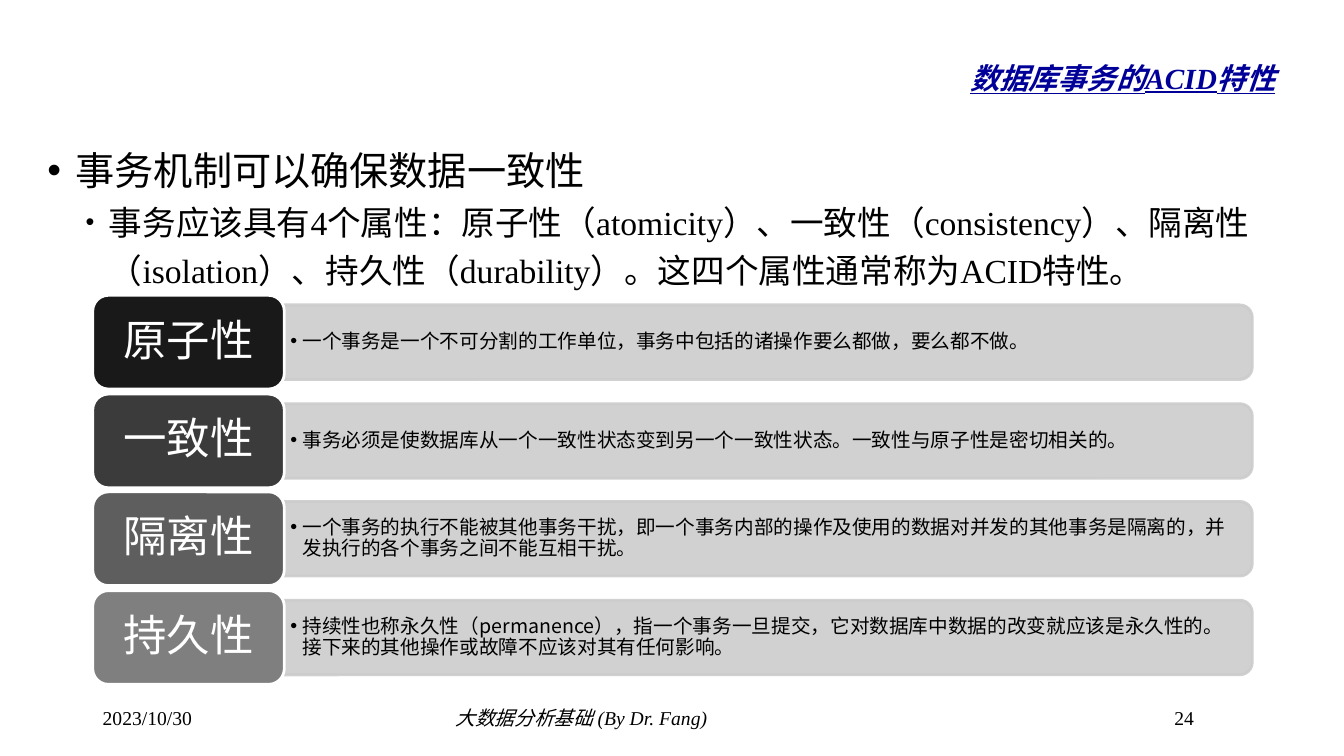
from lxml import etree
from pptx import Presentation
from pptx.dml.color import RGBColor as RGB
from pptx.enum.shapes import MSO_SHAPE as SHAPE
from pptx.enum.text import MSO_ANCHOR as ANCHOR, MSO_AUTO_SIZE as AUTO, PP_ALIGN as ALIGN
from pptx.oxml.ns import qn
from pptx.util import Pt

# Content
TITLE = "数据库事务的ACID特性"
POINTS = [  # text, size, left margin, hanging indent, bullet percent
    ("事务机制可以确保数据一致性", 28, 28, 28, 100),
    ("事务应该具有4个属性：原子性（atomicity）、一致性（consistency）、"
     "隔离性（isolation）、持久性（durability）。这四个属性通常称为ACID特性。", 24, 61, 23, 75),
]
CARDS = [  # label, opacity percent, description
    ("原子性", 90, "一个事务是一个不可分割的工作单位，事务中包括的诸操作要么都做，要么都不做。"),
    ("一致性", 77, "事务必须是使数据库从一个一致性状态变到另一个一致性状态。一致性与原子性是密切相关的。"),
    ("隔离性", 63, "一个事务的执行不能被其他事务干扰，即一个事务内部的操作及使用的数据对并发的"
     "其他事务是隔离的，并发执行的各个事务之间不能互相干扰。"),
    ("持久性", 50, "持续性也称永久性（permanence），指一个事务一旦提交，它对数据库中数据的改变"
     "就应该是永久性的。接下来的其他操作或故障不应该对其有任何影响。"),
]
FOOT = [  # text, left, width, italic
    ("2023/10/30", 92, 300, False),
    ("大数据分析基础 (By Dr. Fang)", 442, 642, True),
    ("24", 1155, 87, False),
]
COLORS = {"title": "000099", "text": "000000", "label": "FFFFFF", "card": "000000", "bar": "CCCCCC"}
SERIF, SANS = "Times New Roman", "Noto Sans CJK SC"

# Geometry, 100 px to the inch
PX = 9144
LEFT, TOP, PITCH = 92, 293, 97.6
CARD_W, CARD_H = 190, 93
BAR_W, BAR_H = 960, 74
TEXT_W, TEXT_H = 956, 67


def place(shape, x, y, w, h):
    shape.left, shape.top, shape.width, shape.height = [round(v * PX) for v in (x, y, w, h)]


def style(para, size, face, color):
    font = para.font
    font.size, font.name = Pt(size), face
    font.color.rgb = RGB.from_string(COLORS[color])
    return font


def bullet(para, margin, hang, percent=100):
    props = para._p.get_or_add_pPr()
    props.set("marL", str(margin * PX))
    props.set("indent", str(-hang * PX))
    for tag, key, val in (("a:buSzPct", "val", str(percent * 1000)),
                          ("a:buFont", "typeface", "Arial"), ("a:buChar", "char", "•")):
        etree.SubElement(props, qn(tag)).set(key, val)


def inset(frame, x, y):
    frame.margin_left = frame.margin_right = x * PX
    frame.margin_top = frame.margin_bottom = y * PX
    frame.vertical_anchor = ANCHOR.MIDDLE
    frame.word_wrap = True


def fade(fill, percent):
    for color in fill.iter(qn("a:srgbClr")):
        etree.SubElement(color, qn("a:alpha")).set("val", str(percent * 1000))


def block(kind, box, fill, line, alpha):
    shape = slide.shapes.add_shape(kind, 0, 0, 0, 0)
    place(shape, *box)
    shape.shadow.inherit = False
    shape.fill.solid()
    shape.fill.fore_color.rgb = RGB.from_string(COLORS[fill])
    fade(shape._element.spPr.find(qn("a:solidFill")), alpha)
    shape.line.color.rgb = RGB.from_string(COLORS[line])
    shape.line.width = Pt(2)
    return shape


def note(text, *box):
    shape = slide.shapes.add_textbox(0, 0, 0, 0)
    place(shape, *box)
    frame = shape.text_frame
    frame.word_wrap = True
    frame.text = text
    return frame


deck = Presentation()
deck.slide_width, deck.slide_height = 1333 * PX, 750 * PX
slide = deck.slides.add_slide(deck.slide_layouts[1])

# Title
title = slide.shapes.title
place(title, 194, 5, 1081, 110)
title.text_frame.text = TITLE
title.text_frame.auto_size = AUTO.NONE
title.text_frame.vertical_anchor = ANCHOR.MIDDLE
head = title.text_frame.paragraphs[0]
head.alignment = ALIGN.RIGHT
font = style(head, 36, SERIF, "title")
font.bold = font.italic = font.underline = True
font._element.set("baseline", "-25000")

# Body list
body = slide.placeholders[1]
place(body, 37, 131, 1260, 559)
frame = body.text_frame
frame.text = "\n".join(point[0] for point in POINTS)
frame.auto_size = AUTO.NONE
for level, (para, point) in enumerate(zip(frame.paragraphs, POINTS)):
    _, size, margin, hang, percent = point
    para.level = level
    bullet(para, margin, hang, percent)
    para.line_spacing, para.space_before = 1.2, Pt(0)
    style(para, size, SERIF, "text")

# Footer
for text, x, w, slant in FOOT:
    frame = note(text, x, 695, w, 40)
    style(frame.paragraphs[0], 14, SERIF, "text").italic = slant

# Four property rows: turned bar, its text, label card
for row, (label, alpha, text) in enumerate(CARDS):
    y = TOP + round(row * PITCH)
    mid = y + CARD_H / 2
    edge = LEFT + CARD_W
    box = (edge + (BAR_W - BAR_H) / 2, mid - BAR_W / 2, BAR_H, BAR_W)
    bar = block(SHAPE.ROUND_2_SAME_RECTANGLE, box, "bar", "bar", 90)
    bar.rotation = 90
    fade(bar.line._ln, 90)

    frame = note(text, edge, mid - TEXT_H / 2, TEXT_W, TEXT_H)
    inset(frame, 6, 3)
    para = frame.paragraphs[0]
    bullet(para, 12, 12)
    para.line_spacing = 0.9
    style(para, 14, SANS, "text")

    card = block(SHAPE.ROUNDED_RECTANGLE, (LEFT, y, CARD_W, CARD_H), "card", "label", alpha)
    card.text_frame.text = label
    inset(card.text_frame, 13, 6)
    para = card.text_frame.paragraphs[0]
    para.alignment, para.line_spacing = ALIGN.CENTER, 0.9
    style(para, 31, SANS, "label")

deck.save("out.pptx")
